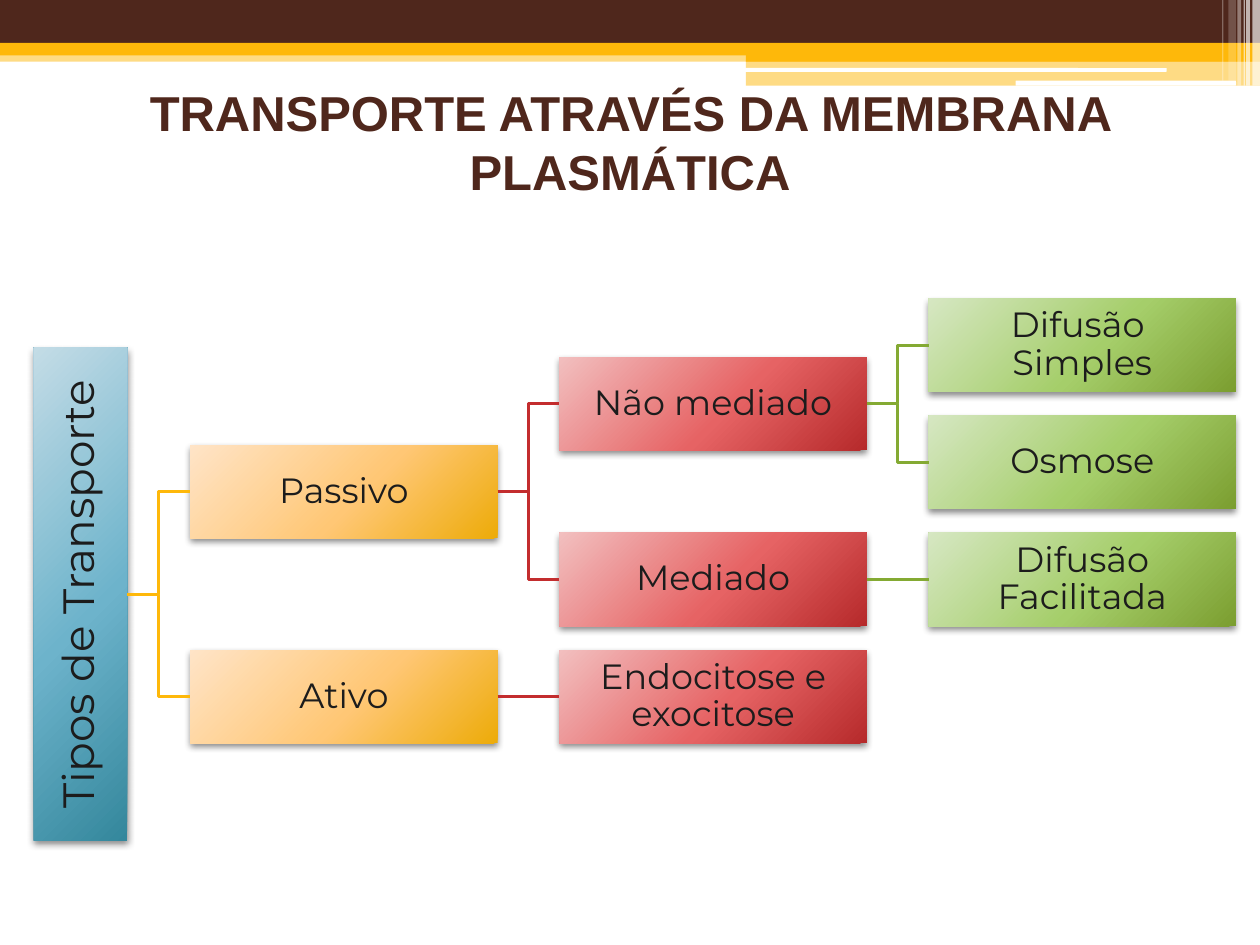
from dataclasses import dataclass
from itertools import count

from lxml.etree import SubElement
from pptx import Presentation
from pptx.dml.color import RGBColor
from pptx.enum.shapes import MSO_CONNECTOR, MSO_SHAPE
from pptx.enum.text import MSO_ANCHOR, MSO_AUTO_SIZE, PP_ALIGN
from pptx.oxml import parse_xml
from pptx.oxml.ns import nsdecls, qn
from pptx.util import Inches, Pt


@dataclass(frozen=True)
class Theme:
    brown: str = "4F271C"
    gold: str = "FEB80A"
    white: str = "FFFFFF"
    ink: str = "1C1C1C"
    shadow: str = "000000"
    title_font: str = "Arial"
    card_font: str = "Montserrat"
    title_size: int = 28
    root_size: int = 25
    card_size: int = 20
    line_width: float = 1.5
    gradients: tuple = (
        ("C3DCE6", "6DB3CB", "34879C"),
        ("FFE4C7", "FFC775", "EDAB09"),
        ("F2BFBF", "E66364", "B62A2B"),
        ("D6E7C2", "A5CE6A", "7B9E30"),
    )
    lines: tuple = ("34879C", "FEB80A", "C32D2E", "84AA33")


@dataclass(frozen=True)
class Box:
    left: float
    top: float
    width: float
    height: float


THEME = Theme()
CARD_WIDTH, CARD_HEIGHT = 2.44, 0.74
COLUMN_STEP, ROW_STEP = 2.93, 0.93
FIRST_COLUMN, ROOT_HEIGHT = 1.24, 3.91
INSET = 0.01

TREE = ("Tipos de Transporte", [
    ("Passivo", [
        ("Não mediado", [("Difusão \nSimples", []), ("Osmose", [])]),
        ("Mediado", [("Difusão Facilitada", [])]),
    ]),
    ("Ativo", [("Endocitose e exocitose", [])]),
])

BANDS = [
    (0, 0.4, 10, 0.09, THEME.gold, 50),
    (0, 0, 10, 0.34, THEME.brown, 100),
    (0, 0.34, 10, 0.1, THEME.gold, 100),
    (5.92, 0.39, 4.08, 0.1, THEME.gold, 100),
    (5.92, 0.48, 4.08, 0.2, THEME.gold, 50),
]
PILLS = [
    (5.91, 0.54, 3.35, 0.03, THEME.white, 100),
    (8.06, 0.64, 1.75, 0.04, THEME.white, 100),
]
STRIPES = [
    (9.94, 0, 0.06, 0.68, THEME.white, 65),
    (9.89, 0, 0.03, 0.68, THEME.white, 65),
    (9.87, 0, 0.01, 0.68, THEME.white, 60),
    (9.82, 0, 0.03, 0.68, THEME.white, 40),
    (9.75, 0, 0.06, 0.64, THEME.white, 20),
    (9.7, 0, 0.01, 0.64, THEME.white, 30),
]


def apply_format(target, values):
    for name, value in values.items():
        setattr(target, name, value)


def add_plain_shape(page, kind, left, top, width, height):
    shape = page.shapes.add_shape(
        kind, Inches(left), Inches(top), Inches(width), Inches(height))
    shape.shadow.inherit = False
    shape.line.fill.background()
    return shape


def add_header(page, box):
    groups = (
        (MSO_SHAPE.RECTANGLE, BANDS),
        (MSO_SHAPE.ROUNDED_RECTANGLE, PILLS),
        (MSO_SHAPE.RECTANGLE, STRIPES),
    )
    for kind, parts in groups:
        for left, top, width, height, color, opacity in parts:
            shape = add_plain_shape(
                page, kind, box.left + left, box.top + top, width, height)
            shape.fill.solid()
            shape.fill.fore_color.rgb = RGBColor.from_string(color)
            if opacity < 100:
                tint = shape.element.spPr.find(".//" + qn("a:srgbClr"))
                SubElement(tint, qn("a:alpha"), val=str(opacity * 1000))


def write_text(frame, text, font_format):
    frame.text = text
    for para in frame.paragraphs:
        para.alignment = PP_ALIGN.CENTER
        for span in para.runs:
            values = dict(font_format)
            span.font.color.rgb = RGBColor.from_string(values.pop("color"))
            apply_format(span.font, values)


def add_title(page, box):
    title = page.shapes.title
    apply_format(title, {
        "left": Inches(box.left), "top": Inches(box.top),
        "width": Inches(box.width), "height": Inches(box.height),
    })
    apply_format(title.text_frame, {
        "auto_size": MSO_AUTO_SIZE.NONE,
        "word_wrap": True,
        "vertical_anchor": MSO_ANCHOR.MIDDLE,
    })
    write_text(title.text_frame, "TRANSPORTE ATRAVÉS DA MEMBRANA PLASMÁTICA", {
        "name": THEME.title_font, "size": Pt(THEME.title_size),
        "bold": True, "color": THEME.brown,
    })


def paint_card(shape, colors):
    stops = "".join(
        f'<a:gs pos="{place * 1000}"><a:srgbClr val="{color}"/></a:gs>'
        for place, color in zip((0, 55, 100), colors))
    gradient = parse_xml(
        f'<a:gradFill {nsdecls("a")} rotWithShape="1"><a:gsLst>{stops}</a:gsLst>'
        '<a:path path="circle"><a:fillToRect l="-40000" t="-90000" '
        'r="140000" b="190000"/></a:path></a:gradFill>')
    shape.fill.background()
    properties = shape.element.spPr
    properties.replace(properties.find(qn("a:noFill")), gradient)
    properties.find(qn("a:effectLst")).append(parse_xml(
        f'<a:outerShdw {nsdecls("a")} blurRad="{Pt(4)}" dist="{Pt(2)}" '
        'dir="5400000" rotWithShape="0">'
        f'<a:srgbClr val="{THEME.shadow}"><a:alpha val="45000"/></a:srgbClr>'
        '</a:outerShdw>'))


def add_card(page, box, text, level):
    card = add_plain_shape(
        page, MSO_SHAPE.RECTANGLE, box.left, box.top, box.width, box.height)
    paint_card(card, THEME.gradients[level])
    frame = card.text_frame
    apply_format(frame, {
        "word_wrap": True, "vertical_anchor": MSO_ANCHOR.MIDDLE,
        "margin_left": Inches(INSET), "margin_right": Inches(INSET),
        "margin_top": Inches(INSET), "margin_bottom": Inches(INSET),
    })
    size = THEME.card_size if level else THEME.root_size
    write_text(frame, text, {
        "name": THEME.card_font, "size": Pt(size), "color": THEME.ink})
    for para in frame.paragraphs:
        para.line_spacing = 0.9
    if level == 0:
        frame._txBody.bodyPr.set("vert", "vert270")
    return card


def join_cards(page, parent, child, level, straight):
    kind = MSO_CONNECTOR.STRAIGHT if straight else MSO_CONNECTOR.ELBOW
    link = page.shapes.add_connector(kind, 0, 0, 0, 0)
    link.begin_connect(parent, 3)
    link.end_connect(child, 1)
    link.line.color.rgb = RGBColor.from_string(THEME.lines[level])
    link.line.width = Pt(THEME.line_width)
    SubElement(link.element.spPr, qn("a:effectLst"))


def add_branch(page, box, node, rows, level=0):
    text, children = node
    branches = [add_branch(page, box, child, rows, level + 1)
                for child in children]
    if branches:
        middle = sum(center for _, center in branches) / len(branches)
    else:
        middle = box.top + next(rows) * ROW_STEP + CARD_HEIGHT / 2
    if level:
        left = box.left + FIRST_COLUMN + (level - 1) * COLUMN_STEP
        width, height = CARD_WIDTH, CARD_HEIGHT
    else:
        left, width, height = box.left, CARD_HEIGHT, ROOT_HEIGHT
    card = add_card(
        page, Box(left, middle - height / 2, width, height), text, level)
    for child, _ in branches:
        join_cards(page, card, child, level + 1, len(branches) == 1)
    return card, middle


def main():
    deck = Presentation()
    deck.slide_width, deck.slide_height = Inches(10), Inches(7.5)
    page = deck.slides.add_slide(deck.slide_layouts[5])
    add_header(page, Box(0, 0, 10, 0.68))
    add_title(page, Box(0, 0.7, 10, 0.84))
    add_branch(page, Box(0.27, 2.37, 9.53, 4.3), TREE, count())
    deck.save("out.pptx")


if __name__ == "__main__":
    main()
